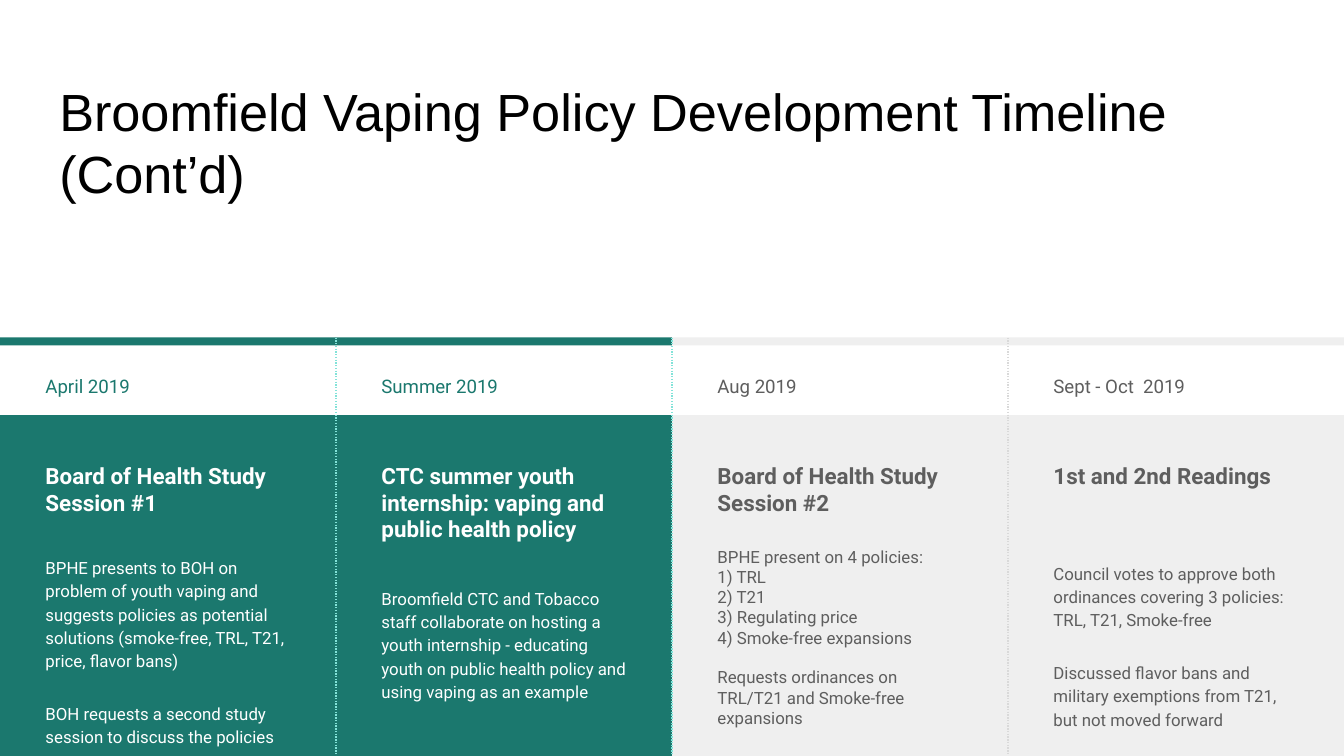
from dataclasses import dataclass

from lxml.etree import SubElement
from pptx import Presentation
from pptx.dml.color import RGBColor
from pptx.enum.dml import MSO_LINE
from pptx.enum.shapes import MSO_CONNECTOR, MSO_SHAPE
from pptx.enum.text import MSO_ANCHOR, MSO_AUTO_SIZE, PP_ALIGN
from pptx.oxml.ns import qn
from pptx.util import Cm, Pt

COLORS = {
    "black": "000000",
    "white": "FFFFFF",
    "green": "1B786E",
    "mint": "83E3D9",
    "light": "EFEFEF",
    "rule": "D9D9D9",
    "gray": "5E5E5E",
}
DONE = {"fill": "green", "date": "green", "text": "white", "divider": "mint"}
AHEAD = {"fill": "light", "date": "gray", "text": "gray", "divider": "rule"}

SLIDE_WIDTH = Cm(25.4)
SLIDE_HEIGHT = Cm(14.29)
TIMELINE_TOP = Cm(6.38)
INSET = Cm(0.25)
FRAME = {
    "word_wrap": True,
    "auto_size": MSO_AUTO_SIZE.NONE,
    "vertical_anchor": MSO_ANCHOR.TOP,
    "margin_left": INSET,
    "margin_right": INSET,
    "margin_top": INSET,
    "margin_bottom": INSET,
}
DATE_FONT = {"name": "Roboto", "size": Pt(10)}
HEADING_FONT = {"name": "Roboto", "size": Pt(12), "bold": True}
BODY_FONT = {"name": "Roboto", "size": Pt(9)}
TITLE_FONT = {"name": "Arial", "size": Pt(28)}


@dataclass
class Stage:
    date: str
    date_width: float
    heading: str
    body: list
    body_top: float
    body_height: float
    style: dict
    line_spacing: float = 1.15
    gap: float = 16
    gap_before: tuple = (1,)


STAGES = [
    Stage("April 2019", 3.43, "Board of Health Study Session #1", [
        "BPHE presents to BOH on problem of youth vaping and suggests policies "
        "as potential solutions (smoke-free, TRL, T21, price, flavor bans)",
        "BOH requests a second study session to discuss the policies",
    ], 3.86, 3.35, DONE),
    Stage("Summer 2019", 3.07, "CTC summer youth internship: vaping and public health policy", [
        "Broomfield CTC and Tobacco staff collaborate on hosting a youth internship - "
        "educating youth on public health policy and using vaping as an example",
    ], 4.44, 2.77, DONE),
    Stage("Aug 2019", 4.11, "Board of Health Study Session #2", [
        "BPHE present on 4 policies:",
        "1) TRL",
        "2) T21",
        "3) Regulating price",
        "4) Smoke-free expansions",
        "Requests ordinances on TRL/T21 and Smoke-free expansions",
    ], 3.7, 3.51, AHEAD, line_spacing=1.0, gap=10.5, gap_before=(5,)),
    Stage("Sept - Oct  2019", 4.24, "1st and 2nd Readings", [
        "Council votes to approve both ordinances covering 3 policies: TRL, T21, Smoke-free",
        "Discussed flavor bans and military exemptions from T21, but not moved forward",
    ], 3.96, 3.02, AHEAD),
]


def color(name):
    return RGBColor.from_string(COLORS[name])


def apply(target, values):
    for name, value in values.items():
        setattr(target, name, value)


def write(shape, texts, font, color_name, line_spacing=1.0, gap=0, gap_before=()):
    frame = shape.text_frame
    apply(frame, FRAME)
    for index, text in enumerate(texts):
        paragraph = frame.add_paragraph() if index else frame.paragraphs[0]
        paragraph.alignment = PP_ALIGN.LEFT
        paragraph.line_spacing = line_spacing
        if index in gap_before:
            paragraph.space_before = Pt(gap)
        run = paragraph.add_run()
        run.text = text
        apply(run.font, font)
        run.font.color.rgb = color(color_name)


def add_panel(shapes, left, top, width, height, color_name):
    panel = shapes.add_shape(MSO_SHAPE.RECTANGLE, left, top, width, height)
    panel.shadow.inherit = False
    panel.fill.solid()
    panel.fill.fore_color.rgb = color(color_name)
    panel.line.fill.background()


def add_divider(shapes, left, top, bottom, color_name):
    divider = shapes.add_connector(MSO_CONNECTOR.STRAIGHT, left, top, left, bottom)
    divider.line.color.rgb = color(color_name)
    divider.line.width = Pt(0.75)
    divider.line.dash_style = MSO_LINE.ROUND_DOT
    SubElement(divider._element.spPr, qn("a:effectLst"))


def add_title(slide, left, top, width, height):
    title = slide.shapes.title
    apply(title, {"left": left, "top": top, "width": width, "height": height})
    write(title, ["Broomfield Vaping Policy Development Timeline (Cont’d)"], TITLE_FONT, "black")


def add_stage(slide, stage, left, top, width, height, has_divider):
    shapes = slide.shapes.add_group_shape().shapes
    style = stage.style
    text_left = left + Cm(0.61)
    text_width = width - Cm(1.2)
    body_panel_top = Cm(1.47)
    add_panel(shapes, left, top + body_panel_top, width, height - body_panel_top, style["fill"])
    add_panel(shapes, left, top, width, Cm(0.15), style["fill"])

    date = shapes.add_textbox(text_left, top + Cm(0.4), Cm(stage.date_width), Cm(0.71))
    write(date, [stage.date], DATE_FONT, style["date"], line_spacing=1.15)
    heading = shapes.add_textbox(text_left, top + Cm(2.1), text_width, Cm(2.21))
    write(heading, [stage.heading], HEADING_FONT, style["text"])
    body = shapes.add_textbox(text_left, top + Cm(stage.body_top), text_width, Cm(stage.body_height))
    write(body, stage.body, BODY_FONT, style["text"],
          stage.line_spacing, stage.gap, stage.gap_before)

    if has_divider:
        add_divider(shapes, left + width, top, top + height, style["divider"])


def add_timeline(slide, left, top, width, height):
    stage_width = width // len(STAGES)
    last = len(STAGES) - 1
    for index, stage in reversed(list(enumerate(STAGES))):
        add_stage(slide, stage, left + index * stage_width, top, stage_width, height, index < last)


def main():
    presentation = Presentation()
    apply(presentation, {"slide_width": SLIDE_WIDTH, "slide_height": SLIDE_HEIGHT})
    slide = presentation.slides.add_slide(presentation.slide_layouts[5])
    slide.background.fill.solid()
    slide.background.fill.fore_color.rgb = color("white")
    add_title(slide, Cm(0.87), Cm(1.24), Cm(23.67), Cm(1.6))
    add_timeline(slide, Cm(0), TIMELINE_TOP, SLIDE_WIDTH, SLIDE_HEIGHT - TIMELINE_TOP)
    presentation.save("out.pptx")


if __name__ == "__main__":
    main()
